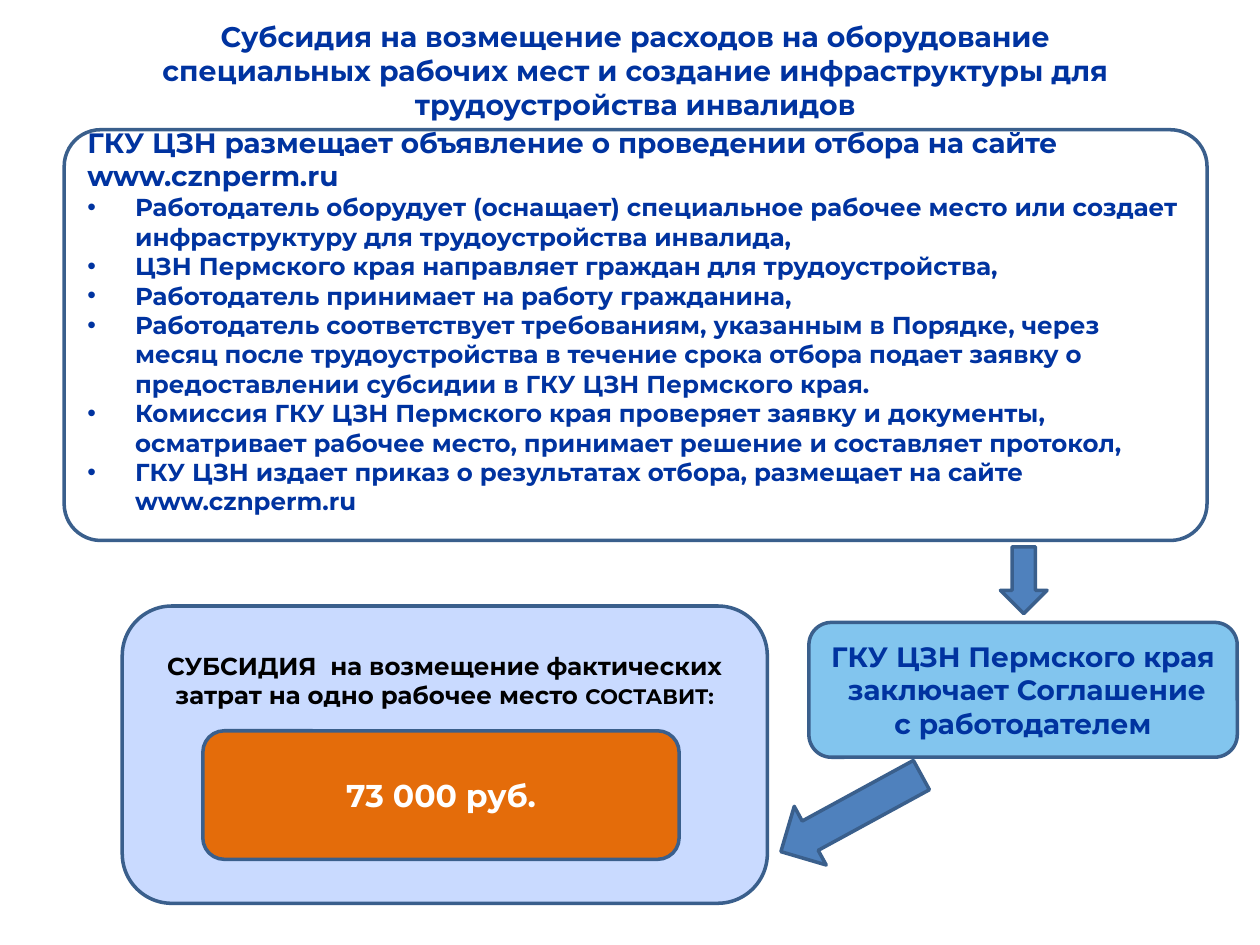
from dataclasses import dataclass

from lxml.etree import SubElement
from pptx import Presentation
from pptx.dml.color import RGBColor
from pptx.enum.shapes import MSO_SHAPE as Preset
from pptx.enum.text import MSO_ANCHOR as Anchor, PP_ALIGN as Align
from pptx.oxml.ns import qn
from pptx.util import Inches, Pt

FONT = "Montserrat"
NAVY, OUTLINE, ARROW = "0033A0", "3A5F8C", "4F81BD"
BULLET_INDENT = 0.38


@dataclass
class Run:
    text: str
    size: float
    color: str = NAVY


@dataclass
class Paragraph:
    runs: list[Run]
    align: Align = Align.CENTER
    bullet: bool = False


@dataclass
class Panel:
    left: float
    top: float
    width: float
    height: float
    fill: str | None
    paragraphs: list[Paragraph]
    anchor: Anchor = Anchor.MIDDLE
    margin_top: float = 0.05
    margin_bottom: float = 0.05
    corner: float = 0.1667


@dataclass
class Arrow:
    left: float
    top: float
    width: float
    height: float
    rotation: float


def rgb(value: str) -> RGBColor:
    """Turn a hex string into a colour."""
    return RGBColor.from_string(value)


def box(item) -> tuple:
    """Give the position and size of an item as lengths."""
    return tuple(Inches(v) for v in (item.left, item.top, item.width, item.height))


def add_bullet(paragraph) -> None:
    """Give a paragraph a round bullet with a hanging indent."""
    properties = paragraph._p.get_or_add_pPr()
    properties.set("marL", str(Inches(BULLET_INDENT)))
    properties.set("indent", str(-Inches(BULLET_INDENT)))
    SubElement(properties, qn("a:buFont"), typeface="Arial")
    SubElement(properties, qn("a:buChar"), char="•")


def write(frame, paragraphs: list[Paragraph]) -> None:
    """Fill a text frame run by run."""
    frame.word_wrap = True
    for index, content in enumerate(paragraphs):
        paragraph = frame.add_paragraph() if index else frame.paragraphs[0]
        paragraph.alignment = content.align
        if content.bullet:
            add_bullet(paragraph)
        for part in content.runs:
            run = paragraph.add_run()
            run.text = part.text
            run.font.name = FONT
            run.font.size = Pt(part.size)
            run.font.bold = True
            run.font.color.rgb = rgb(part.color)


def style(shape, fill: str | None) -> None:
    """Set the fill and the common outline of a shape."""
    shape.shadow.inherit = False
    if fill:
        shape.fill.solid()
        shape.fill.fore_color.rgb = rgb(fill)
    else:
        shape.fill.background()
    shape.line.color.rgb = rgb(OUTLINE)
    shape.line.width = Pt(2)


def draw_panel(slide, panel: Panel) -> None:
    """Draw a rounded panel with its text."""
    shape = slide.shapes.add_shape(Preset.ROUNDED_RECTANGLE, *box(panel))
    shape.adjustments[0] = panel.corner
    style(shape, panel.fill)
    frame = shape.text_frame
    frame.vertical_anchor = panel.anchor
    frame.margin_top = Inches(panel.margin_top)
    frame.margin_bottom = Inches(panel.margin_bottom)
    write(frame, panel.paragraphs)


def draw_arrow(slide, arrow: Arrow) -> None:
    """Draw a rotated block arrow."""
    shape = slide.shapes.add_shape(Preset.RIGHT_ARROW, *box(arrow))
    shape.rotation = arrow.rotation
    style(shape, ARROW)


def draw_title(slide, text: str) -> None:
    """Draw the slide heading."""
    shape = slide.shapes.add_textbox(Inches(0.97), Inches(0.13), Inches(8.14), Inches(0.86))
    shape.text_frame.vertical_anchor = Anchor.MIDDLE
    write(shape.text_frame, [Paragraph([Run(text, 16.2)])])


STEPS = [
    "Работодатель оборудует (оснащает) специальное рабочее место или создает "
    "инфраструктуру для трудоустройства инвалида,",
    "ЦЗН Пермского края направляет граждан для трудоустройства,",
    "Работодатель принимает на работу гражданина,",
    "Работодатель соответствует требованиям, указанным в Порядке, через месяц после "
    "трудоустройства в течение срока отбора подает заявку о предоставлении субсидии "
    "в ГКУ ЦЗН Пермского края.",
    "Комиссия ГКУ ЦЗН Пермского края проверяет заявку и документы, осматривает рабочее "
    "место, принимает решение и составляет протокол,",
    "ГКУ ЦЗН издает приказ о результатах отбора, размещает на сайте www.cznperm.ru",
]
ANNOUNCEMENT = "ГКУ ЦЗН размещает объявление о проведении отбора на сайте www.cznperm.ru"

PANELS = [
    Panel(0.97, 4.81, 5.12, 2.36, "C9DAFF", [Paragraph([
        Run("СУБСИДИЯ  на возмещение фактических затрат на одно рабочее место ", 14, "000000"),
        Run("СОСТАВИТ:", 12, "000000"),
    ])], anchor=Anchor.TOP, margin_top=0.24),
    Panel(1.61, 5.8, 3.78, 1.02, "E46C0A", [Paragraph([Run("73 000 руб.", 18, "FFFFFF")])]),
    Panel(6.42, 4.94, 3.4, 1.07, "82C5EE", [Paragraph([
        Run("ГКУ ЦЗН Пермского края  заключает Соглашение с работодателем", 16),
    ])]),
    Panel(0.51, 1.03, 9.07, 3.26, None, [
        Paragraph([Run(ANNOUNCEMENT, 16)], Align.LEFT),
        *(Paragraph([Run(step, 14)], Align.LEFT, bullet=True) for step in STEPS),
    ], margin_bottom=0.28, corner=0.089),
]
ARROWS = [Arrow(6.12, 6.19, 1.27, 0.53, 151.4), Arrow(7.86, 4.42, 0.53, 0.37, 90)]


def main() -> None:
    """Build and save the slide."""
    presentation = Presentation()
    presentation.slide_width, presentation.slide_height = Inches(10), Inches(7.5)
    slide = presentation.slides.add_slide(presentation.slide_layouts[6])
    draw_title(slide, "Субсидия на возмещение расходов на оборудование специальных рабочих "
                      "мест и создание инфраструктуры для трудоустройства инвалидов")
    for panel in PANELS:
        draw_panel(slide, panel)
    for arrow in ARROWS:
        draw_arrow(slide, arrow)
    presentation.save("out.pptx")


if __name__ == "__main__":
    main()
